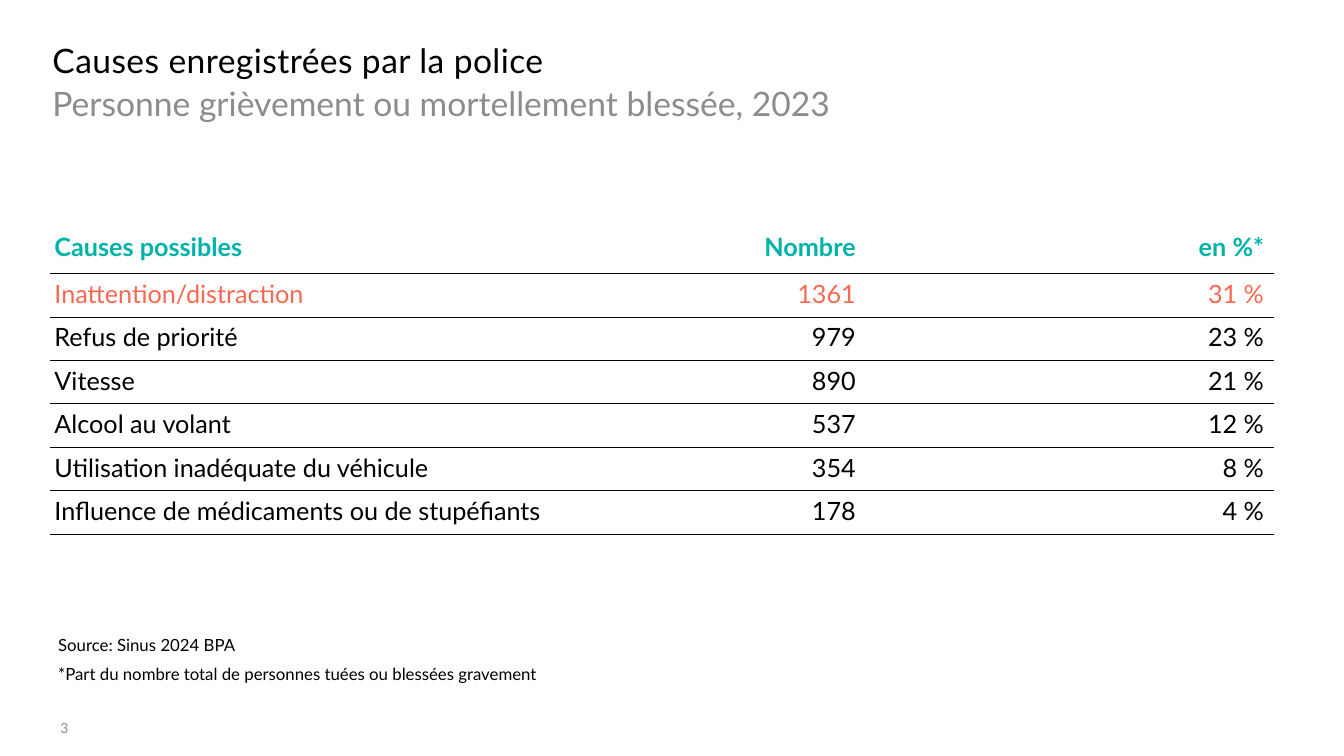
"""Build a slide with a table of accident causes recorded by the police."""
from lxml import etree
from pptx import Presentation
from pptx.dml.color import RGBColor
from pptx.enum.text import MSO_ANCHOR, PP_ALIGN
from pptx.oxml.ns import qn
from pptx.util import Pt

LEFT, RIGHT, TOP = PP_ALIGN.LEFT, PP_ALIGN.RIGHT, MSO_ANCHOR.TOP

THEME = {
    "font": "Lato",
    "black": "000000", "grey": "8C8C8C", "teal": "00B2AA", "coral": "F86852",
    "heading": 24, "table": 18, "note": 12, "number": 10,
}

TEXTS = [
    {"lines": ["Causes enregistrées par la police"], "at": (37.5, 28.8, 884, 25),
     "size": "heading", "color": "black", "spacing": 30},
    {"lines": ["Personne grièvement ou mortellement blessée, 2023"],
     "at": (37.5, 57.6, 884, 28), "size": "heading", "color": "grey",
     "format": {"line_spacing": 1.05, "space_after": Pt(12)}},
    {"lines": ["Source: Sinus\u00a02024 BPA",
               "*Part du nombre total de personnes tuées ou blessées gravement"],
     "at": (34.5, 450, 895, 42.5), "size": "note", "color": "black",
     "margins": (7.2, 3.6, 7.2, 3.6), "format": {"space_after": Pt(6)}},
    {"lines": ["3"], "at": (43.2, 514, 64, 13), "size": "number", "color": "grey"},
]

CAUSES = [
    ("Causes possibles", "Nombre", "en %*"),
    ("Inattention/distraction", "1361", "31 %"),
    ("Refus de priorité", "979", "23 %"),
    ("Vitesse", "890", "21 %"),
    ("Alcool au volant", "537", "12 %"),
    ("Utilisation inadéquate du véhicule", "354", "8 %"),
    ("Influence de médicaments ou de stupéfiants", "178", "4 %"),
    ("", "", ""),
]
ROW_COLORS = {0: "teal", 1: "coral"}
COLUMN_WIDTHS = (463, 119.5, 291.5)
TABLE_LEFT, TABLE_TOP = 36, 161.5
HEADER_HEIGHT, ROW_HEIGHT = 34, 31
CELL_MARGINS = (2.9, 3.6, 7.2, 3.6)
RULE_WIDTH = 0.5


def set_values(target, values):
    for name, value in values.items():
        setattr(target, name, value)


def set_margins(target, margins):
    sides = ("margin_left", "margin_top", "margin_right", "margin_bottom")
    set_values(target, {side: Pt(value) for side, value in zip(sides, margins)})


def style_font(font, size, color, bold=False):
    set_values(font, {"name": THEME["font"], "size": Pt(THEME[size]), "bold": bold})
    font.color.rgb = RGBColor.from_string(THEME[color])


def add_text(page, item):
    box = page.shapes.add_textbox(*map(Pt, item["at"]))
    frame = box.text_frame
    set_values(frame, {"word_wrap": True, "vertical_anchor": TOP})
    set_margins(frame, item.get("margins", (0, 0, 0, 0)))
    for index, line in enumerate(item["lines"]):
        para = frame.add_paragraph() if index else frame.paragraphs[0]
        set_values(para, item.get("format", {}))
        span = para.add_run()
        span.text = line
        style_font(span.font, item["size"], item["color"])
        if "spacing" in item:
            span._r.get_or_add_rPr().set("spc", str(item["spacing"]))


def set_borders(cell, ruled_sides):
    properties = cell._tc.get_or_add_tcPr()
    for side in "LRTB":
        line = etree.SubElement(properties, qn(f"a:ln{side}"))
        if side in ruled_sides:
            line.set("w", str(Pt(RULE_WIDTH)))
            fill = etree.SubElement(line, qn("a:solidFill"))
            etree.SubElement(fill, qn("a:srgbClr"), val=THEME["black"])
        else:
            etree.SubElement(line, qn("a:noFill"))


def add_causes_table(page):
    heights = [HEADER_HEIGHT] + [ROW_HEIGHT] * (len(CAUSES) - 1)
    frame = page.shapes.add_table(
        len(CAUSES), len(COLUMN_WIDTHS), Pt(TABLE_LEFT), Pt(TABLE_TOP),
        Pt(sum(COLUMN_WIDTHS)), Pt(sum(heights)))
    table = frame.table
    set_values(table, {"first_row": False, "horz_banding": False})
    for column, width in zip(table.columns, COLUMN_WIDTHS):
        column.width = Pt(width)
    for row, height in zip(table.rows, heights):
        row.height = Pt(height)
    for row_index, values in enumerate(CAUSES):
        ruled_sides = ("T" if row_index else "") + ("B" if row_index < len(CAUSES) - 1 else "")
        for column_index, value in enumerate(values):
            cell = table.cell(row_index, column_index)
            set_borders(cell, ruled_sides)
            cell.fill.background()
            cell.vertical_anchor = TOP
            set_margins(cell, CELL_MARGINS)
            cell.text = value
            para = cell.text_frame.paragraphs[0]
            para.alignment = RIGHT if column_index else LEFT
            for target in (para, *para.runs):
                style_font(target.font, "table", ROW_COLORS.get(row_index, "black"),
                           row_index == 0)


def main():
    deck = Presentation()
    set_values(deck, {"slide_width": Pt(960), "slide_height": Pt(540)})
    page = deck.slides.add_slide(deck.slide_layouts[6])
    for item in TEXTS:
        add_text(page, item)
    add_causes_table(page)
    deck.save("out.pptx")


if __name__ == "__main__":
    main()
